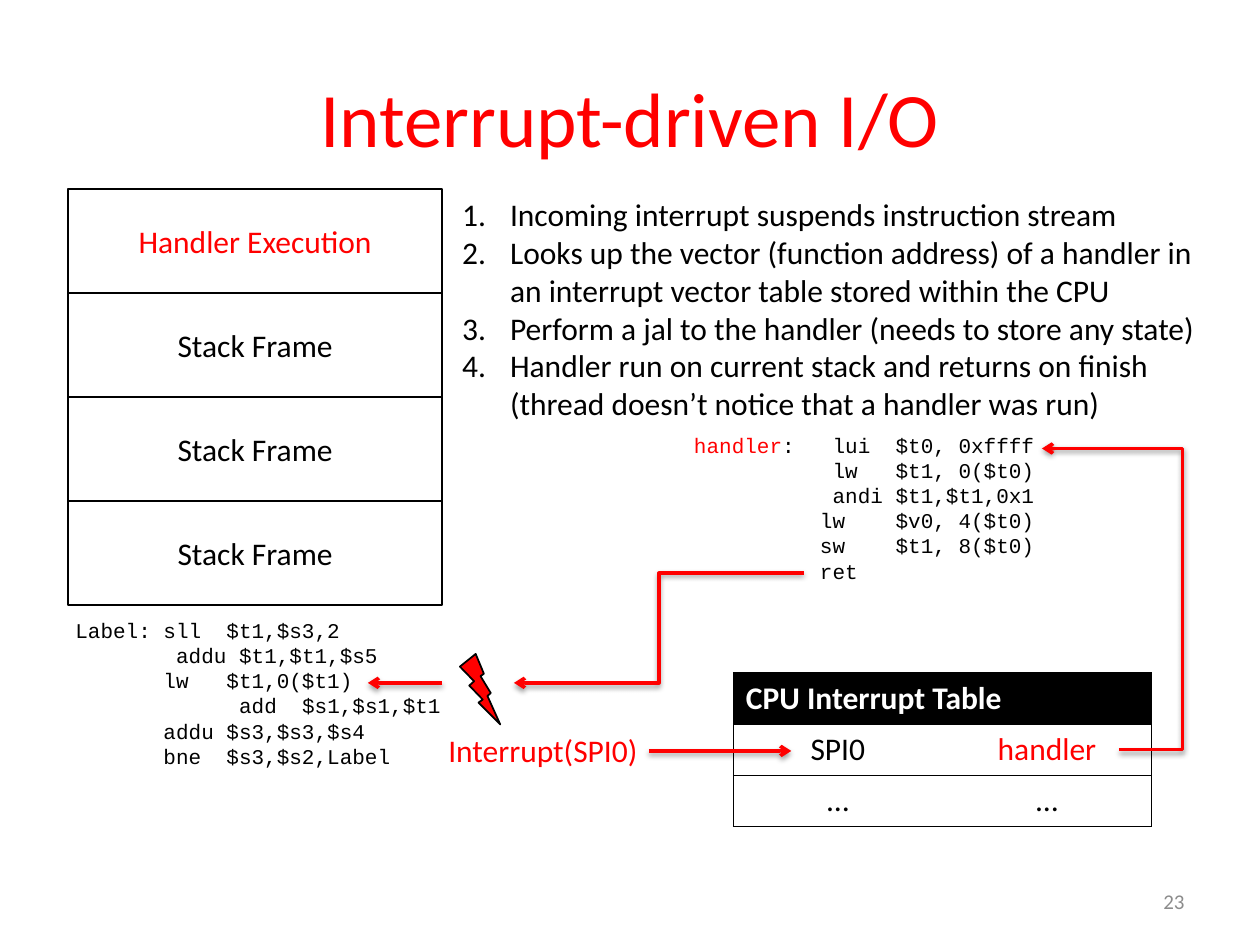
import pptx
import pptx.dml.color
import pptx.enum.shapes
import pptx.enum.text
import pptx.oxml
import pptx.oxml.ns
import pptx.util
from pptx.util import Inches

RED = pptx.dml.color.RGBColor(0xFF, 0x00, 0x00)
BLACK = pptx.dml.color.RGBColor(0x00, 0x00, 0x00)
WHITE = pptx.dml.color.RGBColor(0xFF, 0xFF, 0xFF)
GRAY = pptx.dml.color.RGBColor(0x8C, 0x8C, 0x8C)

ALIGN = pptx.enum.text.PP_ALIGN
ANCHOR = pptx.enum.text.MSO_ANCHOR
SHAPE = pptx.enum.shapes.MSO_SHAPE
CONNECTOR = pptx.enum.shapes.MSO_CONNECTOR


def xml(tag, content="", **attributes):
    """Return a DrawingML element with the given inner XML."""
    listed = " ".join(f'{key}="{value}"' for key, value in attributes.items())
    namespace = pptx.oxml.ns.nsdecls("a")
    return pptx.oxml.parse_xml(f"<a:{tag} {namespace} {listed}>{content}</a:{tag}>")


class SlideBuilder:
    body_font = "Calibri"
    code_font = "Courier New"
    body_size = 18
    code_size = 12

    def __init__(self, slide):
        self.slide = slide

    def add_runs(self, paragraph, runs, font=None, size=None, bold=None):
        """Add (text, color) runs, turning newlines into line breaks."""
        for text, color in runs:
            for number, line in enumerate(text.split("\n")):
                if number:
                    paragraph.add_line_break()
                run = paragraph.add_run()
                run.text = line
                run.font.name = font or self.body_font
                run.font.size = pptx.util.Pt(size or self.body_size)
                run.font.color.rgb = color
                run.font.bold = bold

    def text_box(self, left, top, width, height, paragraphs, align=None,
                 anchor=ANCHOR.TOP, wrap=True, grow=True, indent=None, hanging=None,
                 numbered=False, levels=None, **style):
        box = self.slide.shapes.add_textbox(
            Inches(left), Inches(top), Inches(width), Inches(height))
        frame = box.text_frame
        frame.word_wrap = wrap
        frame.vertical_anchor = anchor
        fit = pptx.enum.text.MSO_AUTO_SIZE
        frame.auto_size = fit.SHAPE_TO_FIT_TEXT if grow else fit.NONE
        for number, runs in enumerate(paragraphs):
            paragraph = frame.add_paragraph() if number else frame.paragraphs[0]
            if align is not None:
                paragraph.alignment = align
            if hanging:
                level = levels[number] if levels else 0
                paragraph.level = level
                properties = paragraph._p.get_or_add_pPr()
                properties.set("marL", str(Inches(indent + level * 0.5)))
                properties.set("indent", str(-Inches(hanging)))
                properties.set("defTabSz", str(Inches(0.5)))
                if numbered:
                    properties.append(xml("buFont", typeface="+mj-lt"))
                    properties.append(xml("buAutoNum", type="arabicPeriod"))
            self.add_runs(paragraph, runs, **style)

    def code(self, left, top, paragraphs, levels=None):
        self.text_box(left, top, 3.13, 1.31, paragraphs, indent=0.1, hanging=0.1,
                      levels=levels, font=self.code_font, size=self.code_size)

    def shape(self, preset, left, top, width, height, fill, label="", color=BLACK):
        shape = self.slide.shapes.add_shape(
            preset, Inches(left), Inches(top), Inches(width), Inches(height))
        shape.shadow.inherit = False
        shape.fill.solid()
        shape.fill.fore_color.rgb = fill
        shape.line.color.rgb = BLACK
        shape.line.width = pptx.util.Pt(1)
        if label:
            shape.text_frame.vertical_anchor = ANCHOR.MIDDLE
            paragraph = shape.text_frame.paragraphs[0]
            paragraph.alignment = ALIGN.CENTER
            self.add_runs(paragraph, [(label, color)])

    def arrow(self, start, end, kind=CONNECTOR.STRAIGHT, bend=None):
        """Draw a shadowed arrow; bend is the elbow's share of the width."""
        arrow = self.slide.shapes.add_connector(
            kind, *(Inches(length) for length in (*start, *end)))
        arrow.line.color.rgb = RED
        arrow.line.width = pptx.util.Pt(2)
        arrow.line._get_or_add_ln().append(xml("tailEnd", type="arrow"))
        shadow = (f'<a:outerShdw blurRad="{pptx.util.Pt(3.1)}" dist="{pptx.util.Pt(1.6)}" '
                  'dir="5400000" rotWithShape="0"><a:srgbClr val="000000">'
                  '<a:alpha val="38000"/></a:srgbClr></a:outerShdw>')
        properties = arrow._element.spPr
        properties.append(xml("effectLst", shadow))
        if bend is not None:
            guides = properties.find(pptx.oxml.ns.qn("a:prstGeom")).get_or_add_avLst()
            guides.append(xml("gd", name="adj1", fmla=f"val {round(bend * 100000)}"))

    def set_borders(self, cell, shown):
        black = f'<a:solidFill><a:srgbClr val="{BLACK}"/></a:solidFill>'
        for side in "LRTB":
            cell._tc.get_or_add_tcPr().append(
                xml(f"ln{side}", black if side in shown else "<a:noFill/>",
                    w=pptx.util.Pt(0.75)))

    def interrupt_table(self, left, top, width, height, heading, rows):
        table = self.slide.shapes.add_table(
            len(rows) + 1, 2, Inches(left), Inches(top), Inches(width), Inches(height)).table
        table.cell(0, 0).merge(table.cell(0, 1))
        for row_index, row in enumerate([[heading, None], *rows]):
            for column, content in enumerate(row):
                cell = table.cell(row_index, column)
                header = row_index == 0
                left_side = "L" if column == 0 else ""
                right_side = "R" if column == 1 or header else ""
                self.set_borders(cell, "TB" + left_side + right_side)
                cell.fill.solid()
                cell.fill.fore_color.rgb = BLACK if header else WHITE
                if content:
                    paragraph = cell.text_frame.paragraphs[0]
                    paragraph.alignment = ALIGN.LEFT if header else ALIGN.CENTER
                    self.add_runs(paragraph, [content], bold=header)


def main():
    deck = pptx.Presentation()
    deck.slide_width, deck.slide_height = Inches(10), Inches(7.5)
    page = SlideBuilder(deck.slides.add_slide(deck.slide_layouts[6]))

    page.text_box(0.5, 0.3, 9, 1.25, [[("Interrupt-driven I/O", RED)]],
                  align=ALIGN.CENTER, anchor=ANCHOR.MIDDLE, grow=False, size=44)

    page.code(0.5, 4.85, [
        [("Label: sll  $t1,$s3,2\n    \t  addu $t1,$t1,$s5\n      lw   $t1,0($t1)", BLACK)],
        [("\t\t\t  add  $s1,$s1,$t1\n      addu $s3,$s3,$s4\n      bne  $s3,$s2,Label", BLACK)],
    ])

    stack = [("Handler Execution", RED)] + [("Stack Frame", BLACK)] * 3
    frame_height = 3.3 / len(stack)
    for position, (label, color) in enumerate(stack):
        page.shape(SHAPE.RECTANGLE, 0.54, 1.5 + position * frame_height, 2.97,
                   frame_height, WHITE, label, color)

    page.code(5.41, 3.38, [
        [("handler", RED), (":\tlui\t$t0, 0xffff", BLACK)],
        [("\t\t\tlw\t$t1, 0($t0)", BLACK)],
        [("\t\t\tandi\t$t1,$t1,0x1", BLACK)],
        [("lw\t$v0, 4($t0)", BLACK)],
        [("sw\t$t1, 8($t0)", BLACK)],
        [("ret", BLACK)],
    ], levels=[0, 0, 0, 2, 2, 2])

    page.shape(SHAPE.LIGHTNING_BOLT, 3.65, 5.19, 0.32, 0.56, RED)
    page.text_box(3.46, 5.75, 1.73, 0.4, [[("Interrupt(SPI0)", RED)]], wrap=False)
    page.interrupt_table(5.82, 5.34, 3.32, 1.22, ("CPU Interrupt Table", WHITE), [
        [("SPI0", BLACK), ("handler", RED)],
        [("…", BLACK), ("…", BLACK)],
    ])

    page.arrow((3.51, 5.42), (2.92, 5.42))
    page.arrow((5.15, 5.96), (6.28, 5.96))
    page.arrow((8.88, 5.95), (8.27, 3.56), CONNECTOR.ELBOW, bend=-0.83)
    page.arrow((6.38, 4.55), (4.08, 5.42), CONNECTOR.ELBOW)

    steps = [
        "Incoming interrupt suspends instruction stream",
        "Looks up the vector (function address) of a handler in\n"
        "an interrupt vector table stored within the CPU",
        "Perform a jal to the handler (needs to store any state)",
        "Handler run on current stack and returns on finish\n"
        "(thread doesn’t notice that a handler was run)",
    ]
    page.text_box(3.57, 1.5, 6.43, 1.92, [[(step, BLACK)] for step in steps],
                  indent=0.38, hanging=0.38, numbered=True)
    page.text_box(7.17, 6.95, 2.33, 0.4, [[("23", GRAY)]], align=ALIGN.RIGHT,
                  anchor=ANCHOR.MIDDLE, grow=False, size=12)

    deck.save("out.pptx")


if __name__ == "__main__":
    main()
